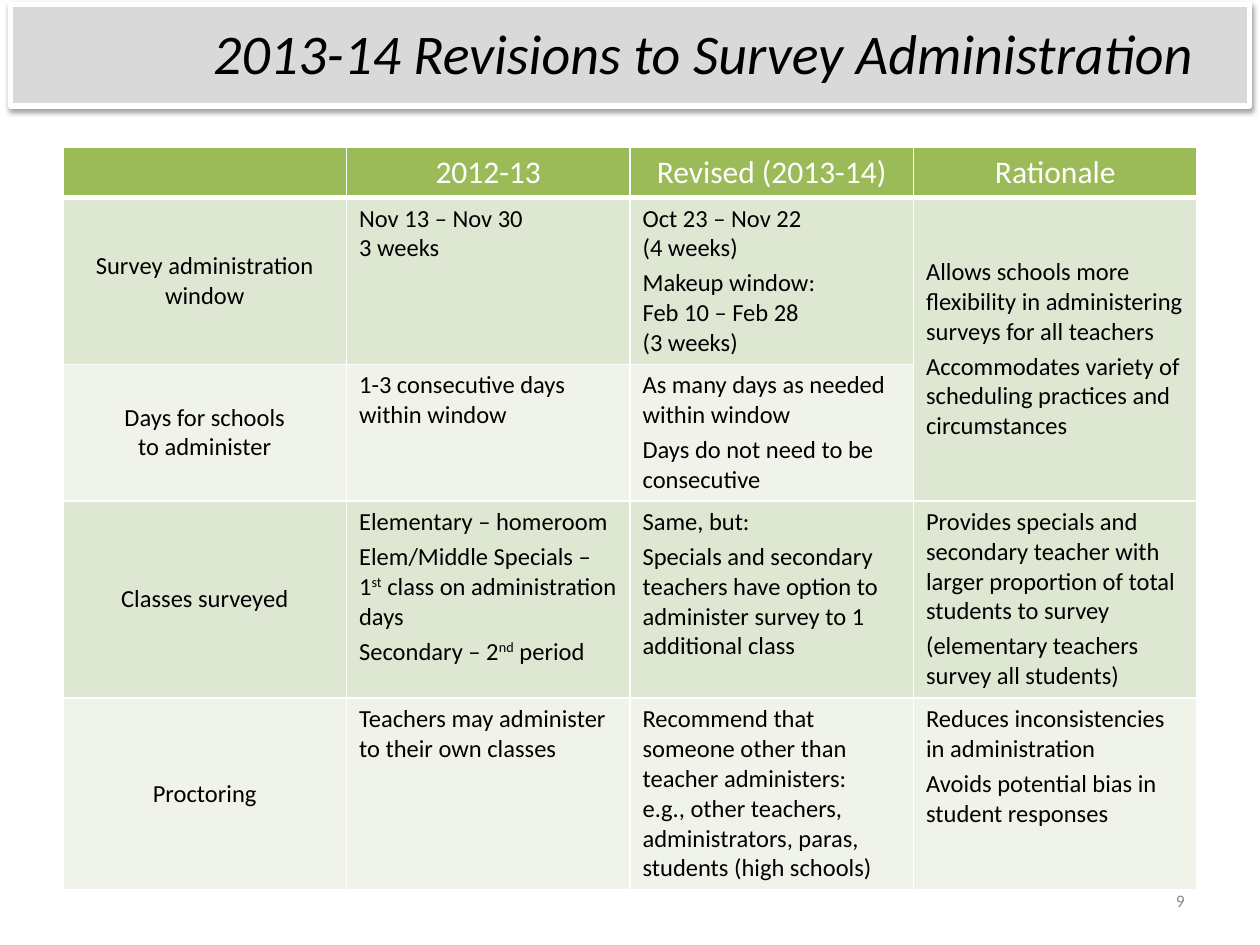
import pptx
import pptx.dml.color
import pptx.enum.shapes
import pptx.enum.text
import pptx.oxml
import pptx.oxml.ns
import pptx.util

RGB = pptx.dml.color.RGBColor
ALIGN = pptx.enum.text.PP_ALIGN
ANCHOR = pptx.enum.text.MSO_ANCHOR

BLACK = RGB(0x00, 0x00, 0x00)
WHITE = RGB(0xFF, 0xFF, 0xFF)
GRAY = RGB(0xD9, 0xD9, 0xD9)
MUTED = RGB(0x8C, 0x8C, 0x8C)
GREEN = RGB(0x9B, 0xBB, 0x59)
BANDS = RGB(0xDE, 0xE7, 0xD1), RGB(0xEF, 0xF3, 0xEA)

COLS, ROWS = 60, 45
ROW_HEIGHTS = 2.4, 7.95, 6.5, 9.4, 9.1

REVISIONS = [
    ["", "2012-13", "Revised (2013-14)", "Rationale"],
    ["Survey administration\nwindow",
     "Nov 13 – Nov 30\n3 weeks",
     "Oct 23 – Nov 22\n(4 weeks)\n\nMakeup window:\nFeb 10 – Feb 28\n(3 weeks)",
     "Allows schools more flexibility in administering surveys for all teachers\n\n"
     "Accommodates variety of scheduling practices and circumstances"],
    ["Days for schools\nto administer",
     "1-3 consecutive days within window",
     "As many days as needed within window\n\nDays do not need to be consecutive",
     ""],
    ["Classes surveyed",
     "Elementary – homeroom\n\n"
     "Elem/Middle Specials – 1^st^ class on administration days\n\n"
     "Secondary – 2^nd^ period",
     "Same, but:\n\nSpecials and secondary teachers have option to "
     "administer survey to 1 additional class",
     "Provides specials and secondary teacher with larger proportion of total "
     "students to survey\n\n(elementary teachers survey all students)"],
    ["Proctoring",
     "Teachers may administer to their own classes",
     "Recommend that someone other than teacher administers:\n"
     "e.g., other teachers, administrators, paras, students (high schools)",
     "Reduces inconsistencies in administration\n\n"
     "Avoids potential bias in student responses"],
]


def write(tf, text, size=14, color=BLACK, align=ALIGN.LEFT, italic=False, gap=3):
    """Fill a frame; blank lines part groups, carets enclose superscripts."""
    p = tf.paragraphs[0]
    groups = text.split("\n\n")
    for g, group in enumerate(groups):
        for i, line in enumerate(group.split("\n")):
            if g or i:
                p = tf.add_paragraph()
            p.alignment = align
            for n, part in enumerate(line.split("^")):
                r = p.add_run()
                r.text = part
                r.font.name = "Calibri"
                r.font.size = pptx.util.Pt(size)
                r.font.italic = italic
                r.font.color.rgb = color
                if n % 2:
                    r.font._element.set("baseline", "30000")
        if g < len(groups) - 1:
            p.space_after = pptx.util.Pt(gap)


class Deck:
    """Holds the presentation, its grid and the current slide."""

    def __init__(self):
        self.prs = pptx.Presentation()
        self.prs.slide_width = pptx.util.Inches(10)
        self.prs.slide_height = pptx.util.Inches(7.5)
        self.s = self.prs.slides.add_slide(self.prs.slide_layouts[6])

    def x(self, cols):
        return round(self.prs.slide_width * cols / COLS)

    def y(self, rows):
        return round(self.prs.slide_height * rows / ROWS)

    def box(self, left, top, width, height):
        return self.x(left), self.y(top), self.x(width), self.y(height)

    def banner(self, *at):
        sp = self.s.shapes.add_shape(pptx.enum.shapes.MSO_SHAPE.RECTANGLE, *self.box(*at))
        sp.fill.solid()
        sp.fill.fore_color.rgb = GRAY
        sp.line.color.rgb = WHITE
        sp.line.width = pptx.util.Pt(3)
        sp.shadow.inherit = False
        effects = sp._element.spPr.find(pptx.oxml.ns.qn("a:effectLst"))
        effects.append(pptx.oxml.parse_xml(
            f'<a:outerShdw {pptx.oxml.ns.nsdecls("a")} blurRad="{pptx.util.Pt(3.1)}" '
            f'dist="{pptx.util.Pt(1.6)}" dir="5400000" algn="t" rotWithShape="0">'
            '<a:srgbClr val="000000"><a:alpha val="38000"/></a:srgbClr></a:outerShdw>'))

    def text(self, text, *at, **style):
        tf = self.s.shapes.add_textbox(*self.box(*at)).text_frame
        tf.word_wrap = True
        tf.vertical_anchor = ANCHOR.MIDDLE
        write(tf, text, **style)

    def border(self, cell, bottom):
        tcPr = cell._tc.get_or_add_tcPr()
        for i, (side, points) in enumerate(zip("LRTB", (1, 1, 1, bottom))):
            tcPr.insert(i, pptx.oxml.parse_xml(
                f'<a:ln{side} {pptx.oxml.ns.nsdecls("a")} w="{pptx.util.Pt(points)}">'
                f'<a:solidFill><a:srgbClr val="{WHITE}"/></a:solidFill></a:ln{side}>'))

    def table(self, data, heights, left, top, width):
        at = self.box(left, top, width, sum(heights))
        table = self.s.shapes.add_table(len(data), len(data[0]), *at).table
        table.horz_banding = False
        for i, (row, height) in enumerate(zip(data, heights)):
            table.rows[i].height = self.y(height)
            for j, text in enumerate(row):
                cell = table.cell(i, j)
                header = i == 0
                cell.fill.solid()
                cell.fill.fore_color.rgb = GREEN if header else BANDS[(i - 1) % 2]
                self.border(cell, 3 if header else 1)
                centred = header or j == 0
                cell.vertical_anchor = ANCHOR.MIDDLE if centred else ANCHOR.TOP
                if text:
                    write(cell.text_frame, text, size=18 if header else 14,
                          color=WHITE if header else BLACK,
                          align=ALIGN.CENTER if centred else ALIGN.LEFT)
        return table


def main():
    deck = Deck()
    deck.banner(0.5, 0.2, 59, 4.85)
    deck.text("2013-14 Revisions to Survey Administration", 7, 0, 53, 5,
              size=32, italic=True, align=ALIGN.CENTER)
    table = deck.table(REVISIONS, ROW_HEIGHTS, 3, 7, 54)
    rationale = table.cell(1, 3)
    rationale.merge(table.cell(2, 3))
    rationale.vertical_anchor = ANCHOR.MIDDLE
    deck.text("9", 43, 41.7, 14, 2.4, size=10, color=MUTED, align=ALIGN.RIGHT)
    deck.prs.save("out.pptx")


if __name__ == "__main__":
    main()
